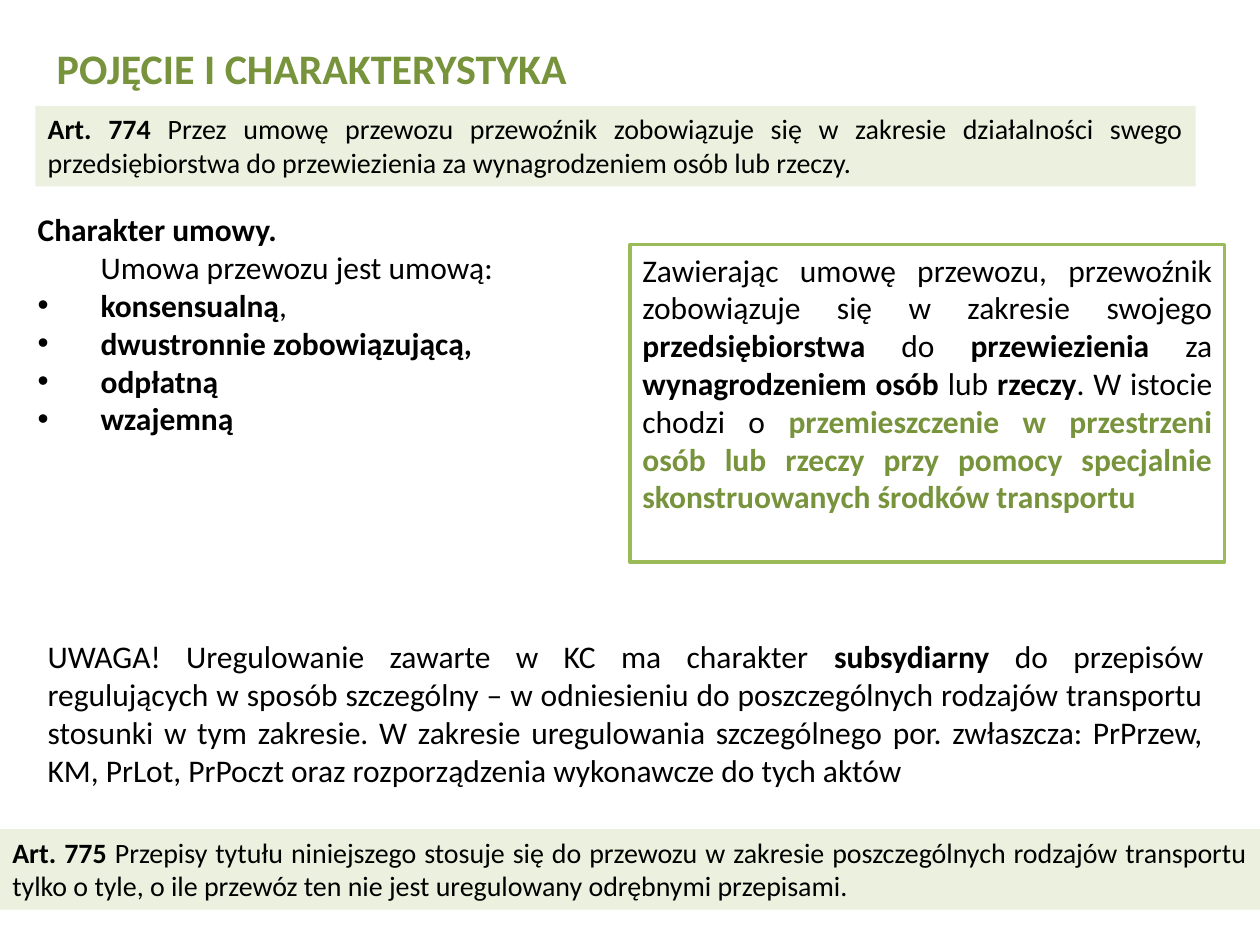
import pptx
import pptx.dml.color
import pptx.enum.shapes
import pptx.enum.text
import pptx.oxml
import pptx.util
from pptx.util import Inches

BLACK = pptx.dml.color.RGBColor(0x00, 0x00, 0x00)
WHITE = pptx.dml.color.RGBColor(0xFF, 0xFF, 0xFF)
GREEN = pptx.dml.color.RGBColor(0x77, 0x93, 0x3C)
BORDER_GREEN = pptx.dml.color.RGBColor(0x9B, 0xBB, 0x59)
PALE_GREEN = pptx.dml.color.RGBColor(0xEB, 0xF1, 0xDE)
FONT = "Calibri"
JUSTIFY = pptx.enum.text.PP_ALIGN.JUSTIFY
LEFT = pptx.enum.text.PP_ALIGN.LEFT


def format_run(run, size, bold, color):
    """Apply the slide font with a size, weight and colour."""
    run.font.name = FONT
    run.font.size = pptx.util.Pt(size)
    run.font.bold = bold
    run.font.color.rgb = color


def fill_paragraph(paragraph, parts, size, alignment):
    """Write (text, bold, optional colour) parts as runs."""
    paragraph.alignment = alignment
    for text, bold, *color in parts:
        run = paragraph.add_run()
        run.text = text
        format_run(run, size, bold, color[0] if color else BLACK)


def prepare_frame(shape, wrap=True):
    """Set top anchoring, wrapping and growth; return the text frame."""
    frame = shape.text_frame
    frame.word_wrap = wrap
    frame.auto_size = pptx.enum.text.MSO_AUTO_SIZE.SHAPE_TO_FIT_TEXT
    frame.vertical_anchor = pptx.enum.text.MSO_ANCHOR.TOP
    return frame


def add_bullet(paragraph):
    """Give a paragraph a round bullet without indent."""
    properties = paragraph._p.get_or_add_pPr()
    properties.set("marL", "0")
    properties.set("indent", "0")
    for tag, name, value in (("buFont", "typeface", "Arial"), ("buChar", "char", "•")):
        properties.append(pptx.oxml.parse_xml(
            '<a:%s xmlns:a="http://schemas.openxmlformats.org/drawingml/2006/main" %s="%s"/>'
            % (tag, name, value)))


def place_title(slide, box, text):
    """Move and format the title placeholder."""
    title = slide.shapes.title
    title.left, title.top, title.width, title.height = map(Inches, box)
    frame = prepare_frame(title, wrap=False)
    frame.text = text
    frame.paragraphs[0].alignment = LEFT
    format_run(frame.paragraphs[0].runs[0], 24, True, GREEN)


def add_panel(slide, box, parts, size, fill, border=None):
    """Add a filled rectangle holding one justified paragraph."""
    panel = slide.shapes.add_shape(
        pptx.enum.shapes.MSO_SHAPE.RECTANGLE, *map(Inches, box))
    panel.shadow.inherit = False
    panel.fill.solid()
    panel.fill.fore_color.rgb = fill
    if border is None:
        panel.line.fill.background()
    else:
        panel.line.color.rgb = border
        panel.line.width = pptx.util.Pt(2)
    fill_paragraph(prepare_frame(panel).paragraphs[0], parts, size, JUSTIFY)


def add_note(slide, box, parts):
    """Add a plain justified remark."""
    note = slide.shapes.add_textbox(*map(Inches, box))
    fill_paragraph(prepare_frame(note).paragraphs[0], parts, 18, JUSTIFY)


def add_contract_features(slide, box, heading, introduction, features):
    """Add the heading, introduction and bulleted contract features."""
    frame = prepare_frame(slide.shapes.add_textbox(*map(Inches, box)))
    fill_paragraph(frame.paragraphs[0], [(heading, True)], 18, LEFT)
    fill_paragraph(frame.add_paragraph(), [("\t" + introduction, False)], 18, LEFT)
    for feature, *ending in features:
        paragraph = frame.add_paragraph()
        parts = [("\t" + feature, True)] + [(text, False) for text in ending]
        fill_paragraph(paragraph, parts, 18, LEFT)
        add_bullet(paragraph)


def main():
    """Build and save the slide."""
    presentation = pptx.Presentation()
    presentation.slide_width, presentation.slide_height = Inches(10), Inches(7.5)
    slide = presentation.slides.add_slide(presentation.slide_layouts[5])

    place_title(slide, (0.35, 0.29, 4.29, 0.5), "POJĘCIE I CHARAKTERYSTYKA")
    add_panel(slide, (0.28, 0.84, 9.21, 0.64), [
        ("Art. 774 ", True),
        ("Przez umowę przewozu przewoźnik zobowiązuje się w zakresie działalności "
         "swego przedsiębiorstwa do przewiezienia za wynagrodzeniem osób lub rzeczy.", False),
    ], 16, PALE_GREEN)
    add_note(slide, (0.28, 5.01, 9.37, 1.31), [
        ("UWAGA! Uregulowanie zawarte w KC ma charakter ", False),
        ("subsydiarny", True),
        (" do przepisów regulujących w sposób szczególny – w odniesieniu do "
         "poszczególnych rodzajów transportu stosunki w tym zakresie. W zakresie "
         "uregulowania szczególnego por. zwłaszcza: PrPrzew, KM, PrLot, PrPoczt oraz "
         "rozporządzenia wykonawcze do tych aktów", False),
    ])
    add_contract_features(
        slide, (0.2, 1.62, 9.21, 1.92), "Charakter umowy. ", "Umowa przewozu jest umową:",
        [("konsensualną", ","), ("dwustronnie zobowiązującą, ",), ("odpłatną",), ("wzajemną",)])
    add_panel(slide, (5, 1.94, 4.72, 2.52), [
        ("Zawierając umowę przewozu, przewoźnik zobowiązuje się w zakresie swojego ", False),
        ("przedsiębiorstwa", True),
        (" do ", False),
        ("przewiezienia", True),
        (" za ", False),
        ("wynagrodzeniem osób", True),
        (" lub ", False),
        ("rzeczy", True),
        (". W istocie chodzi o ", False),
        ("przemieszczenie w przestrzeni osób lub rzeczy przy pomocy specjalnie "
         "skonstruowanych środków transportu", True, GREEN),
    ], 18, WHITE, BORDER_GREEN)
    add_panel(slide, (0, 6.58, 10, 0.64), [
        ("Art. 775 ", True),
        ("Przepisy tytułu niniejszego stosuje się do przewozu w zakresie poszczególnych "
         "rodzajów transportu tylko o tyle, o ile przewóz ten nie jest uregulowany "
         "odrębnymi przepisami.", False),
    ], 16, PALE_GREEN)

    presentation.save("out.pptx")


if __name__ == "__main__":
    main()
